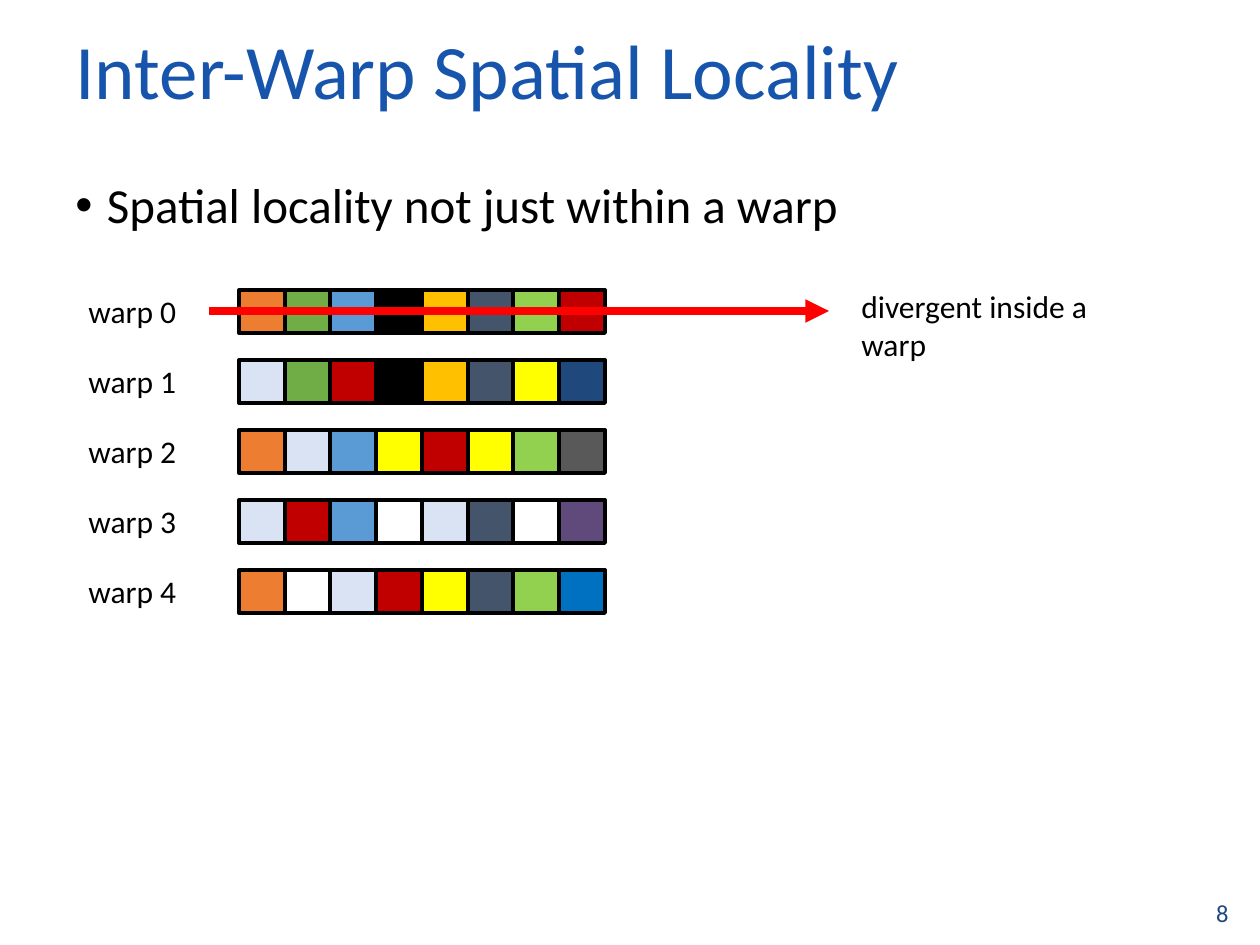
from lxml.etree import SubElement
from pptx import Presentation
from pptx.dml.color import RGBColor as Rgb
from pptx.enum.shapes import MSO_CONNECTOR as Link, MSO_SHAPE as Shape
from pptx.enum.text import MSO_ANCHOR as Anchor, MSO_AUTO_SIZE as Fit, PP_ALIGN as Align
from pptx.oxml.ns import qn
from pptx.util import Emu, Pt

SCALE = 914400 / 126
FONT = "Calibri"

BLACK = Rgb(0x00, 0x00, 0x00)
WHITE = Rgb(0xFF, 0xFF, 0xFF)
TITLE = Rgb(0x17, 0x55, 0xAD)
NAVY = Rgb(0x1F, 0x49, 0x7D)
ARROW = Rgb(0xFF, 0x00, 0x00)
ORANGE = Rgb(0xED, 0x7D, 0x31)
GREEN = Rgb(0x70, 0xAD, 0x47)
SKY = Rgb(0x5B, 0x9B, 0xD5)
GOLD = Rgb(0xFF, 0xC0, 0x00)
SLATE = Rgb(0x44, 0x54, 0x6A)
LIME = Rgb(0x92, 0xD0, 0x50)
RED = Rgb(0xC0, 0x00, 0x00)
PALE = Rgb(0xDA, 0xE3, 0xF3)
YELLOW = Rgb(0xFF, 0xFF, 0x00)
GRAY = Rgb(0x59, 0x59, 0x59)
PURPLE = Rgb(0x60, 0x4A, 0x7B)
BLUE = Rgb(0x00, 0x70, 0xC0)

WARPS = [
    [ORANGE, GREEN, SKY, BLACK, GOLD, SLATE, LIME, RED],
    [PALE, GREEN, RED, BLACK, GOLD, SLATE, YELLOW, NAVY],
    [ORANGE, PALE, SKY, YELLOW, RED, YELLOW, LIME, GRAY],
    [PALE, RED, SKY, WHITE, PALE, SLATE, WHITE, PURPLE],
    [ORANGE, WHITE, PALE, RED, YELLOW, SLATE, LIME, BLUE],
]
ROW_TOP, ROW_STEP = 290, 70
ROW_LEFT, ROW_WIDTH, ROW_HEIGHT = 239, 366, 43


def px(num):
    return Emu(round(num * SCALE))


def write(box, text, size=18, color=BLACK, align=Align.LEFT, anchor=Anchor.TOP, fit=Fit.NONE):
    """Fill a box with one formatted paragraph and return the paragraph."""
    frame = box.text_frame
    frame.word_wrap = True
    frame.auto_size = fit
    frame.vertical_anchor = anchor
    para = frame.paragraphs[0]
    para.alignment = align
    run = para.add_run()
    run.text = text
    run.font.name = FONT
    run.font.size = Pt(size)
    run.font.color.rgb = color
    return para


def add_text(slide, left, top, width, height, text, **style):
    box = slide.shapes.add_textbox(px(left), px(top), px(width), px(height))
    return write(box, text, **style)


def add_title(slide, text):
    box = slide.shapes.title
    box.left, box.top, box.width, box.height = px(63), px(11), px(1134), px(116)
    write(box, text, size=44, color=TITLE, anchor=Anchor.MIDDLE)


def add_bullet(slide, text):
    para = add_text(slide, 63, 175, 1086, 696, text, size=28)
    para.line_spacing = 0.9
    para.space_before = Pt(10)
    props = para._p.get_or_add_pPr()
    indent = Pt(18)
    props.set("marL", str(indent))
    props.set("indent", str(-indent))
    SubElement(props, qn("a:buFont"), typeface="Arial")
    SubElement(props, qn("a:buChar"), char="•")


def add_cell(slide, left, top, width, color):
    cell = slide.shapes.add_shape(Shape.RECTANGLE, px(left), px(top), px(width), px(ROW_HEIGHT))
    cell.shadow.inherit = False
    cell.fill.solid()
    cell.fill.fore_color.rgb = color
    cell.line.color.rgb = BLACK
    cell.line.width = Pt(2.25)


def add_warp(slide, row, colors):
    top = ROW_TOP + row * ROW_STEP
    add_text(slide, 76, top - 4, 160, 50, f"warp {row}", fit=Fit.SHAPE_TO_FIT_TEXT)
    width = ROW_WIDTH / len(colors)
    for col, color in enumerate(colors):
        add_cell(slide, ROW_LEFT + col * width, top, width, color)


def add_arrow(slide, start, end, y):
    arrow = slide.shapes.add_connector(Link.STRAIGHT, px(start), px(y), px(end), px(y))
    arrow.line.color.rgb = ARROW
    arrow.line.width = Pt(4.5)
    SubElement(arrow.line._get_or_add_ln(), qn("a:tailEnd"), type="triangle")
    SubElement(arrow._element.spPr, qn("a:effectLst"))


def main():
    deck = Presentation()
    deck.slide_width, deck.slide_height = px(1260), px(945)
    slide = deck.slides.add_slide(deck.slide_layouts[5])
    add_title(slide, "Inter-Warp Spatial Locality")
    add_text(slide, 948, 888, 293, 50, "8", size=14, color=NAVY,
             align=Align.RIGHT, anchor=Anchor.MIDDLE)
    add_bullet(slide, "Spatial locality not just within a warp")
    for row, colors in enumerate(WARPS):
        add_warp(slide, row, colors)
    add_arrow(slide, 209, 829, 311)
    add_text(slide, 849, 281, 252, 89, "divergent inside a warp", fit=Fit.SHAPE_TO_FIT_TEXT)
    deck.save("out.pptx")


if __name__ == "__main__":
    main()
